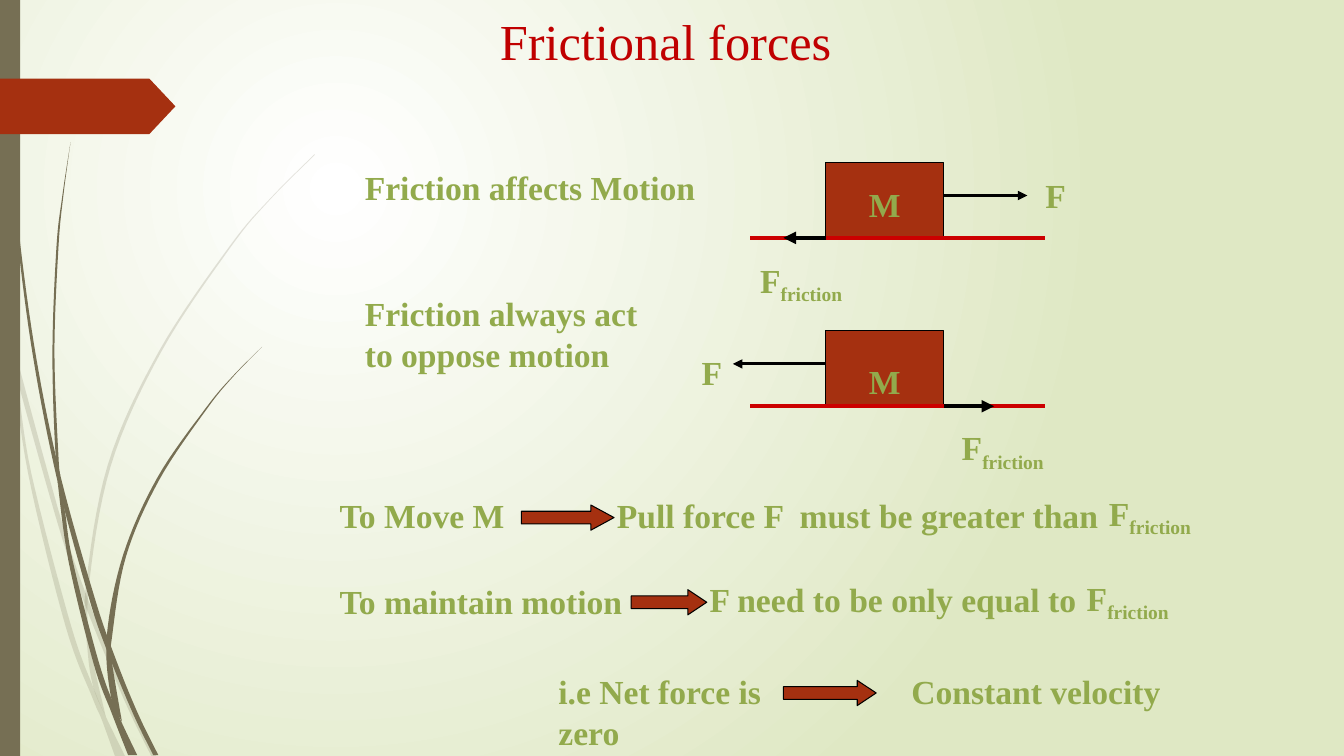
import pptx
import pptx.util
import pptx.dml.color
import pptx.enum.shapes
import pptx.enum.text
import pptx.oxml
import pptx.oxml.ns
import lxml.etree

PX = 9144  # 100 px to the inch
COLORS = {"bark": "766F54", "rust": "A53010", "green": "92AA4C", "title": "C00000",
          "floor": "CC0000", "black": "000000", "white": "FFFFFF", "pale": "DFE8C4"}
RGB = {name: pptx.dml.color.RGBColor.from_string(c) for name, c in COLORS.items()}
SHAPE = pptx.enum.shapes.MSO_SHAPE
qn = pptx.oxml.ns.qn

prs = pptx.Presentation()
prs.slide_width, prs.slide_height = 1333 * PX, 750 * PX
s = prs.slides.add_slide(prs.slide_layouts[6])

# Radial background
fill = s.background.fill
fill.gradient()
for stop, name, position in zip(fill.gradient_stops, ("white", "pale"), (0, 1)):
    stop.color.rgb = RGB[name]
    stop.position = position
lin = s.background._cSld.find(".//" + qn("a:lin"))
radial = lxml.etree.Element(qn("a:path"), path="circle")
lxml.etree.SubElement(radial, qn("a:fillToRect"), l="50000", t="50000", r="100000", b="100000")
lin.getparent().replace(lin, radial)


def smooth(points, steps=8):
    """Catmull-Rom curve through the points, in EMU."""
    padded = [points[0], *points, points[-1]]
    curve = []
    for a, b, c, d in zip(padded, padded[1:], padded[2:], padded[3:]):
        for i in range(steps):
            t = i / steps
            curve.append(tuple(
                PX * (q + t * (r - p) / 2 + t * t * (2 * p - 5 * q + 4 * r - u) / 2
                      + t ** 3 * (3 * q - p - 3 * r + u) / 2)
                for p, q, r, u in zip(a, b, c, d)))
    return curve + [(points[-1][0] * PX, points[-1][1] * PX)]


# Grass blades: opacity, then the two edges from top to bottom
blades = [
    (20, [(0, 299), (10, 344), (17, 376), (58, 522), (84, 599), (123, 694), (150, 750)],
         [(0, 282), (9, 322), (14, 345), (62, 520), (92, 607), (127, 692), (155, 750)]),
    (20, [(11, 350), (28, 470), (65, 621), (92, 693), (101, 714), (114, 750)],
         [(11, 350), (17, 376), (31, 469), (70, 619), (93, 683), (105, 711), (124, 750)]),
    (20, [(312, 153), (268, 197), (228, 244), (158, 348), (107, 461), (85, 584), (87, 646),
          (93, 683), (105, 711)],
         [(312, 154), (268, 198), (229, 245), (160, 349), (110, 462), (88, 584), (91, 646),
          (105, 711)]),
    (100, [(3, 0), (7, 110), (17, 233), (33, 355), (57, 477), (88, 592), (106, 645),
           (132, 708), (152, 749)],
          [(4, 0), (8, 109), (19, 232), (36, 355), (60, 472), (93, 590), (113, 649),
           (136, 706), (157, 749)]),
    (100, [(57, 477), (68, 557), (93, 659), (111, 708), (127, 749)],
          [(57, 477), (64, 505), (72, 556), (98, 657), (116, 706), (136, 749)]),
    (100, [(260, 344), (231, 373), (204, 405), (156, 474), (122, 551), (106, 631),
           (110, 691), (121, 716)],
          [(260, 344), (231, 374), (205, 406), (158, 476), (125, 552), (111, 633),
           (111, 656), (121, 716)]),
    (100, [(70, 141), (62, 193), (56, 245), (52, 349), (55, 449), (60, 472)],
          [(70, 141), (63, 193), (58, 245), (54, 349), (58, 453), (60, 472)]),
]
for opacity, left, right in blades:
    outline = smooth(left) + smooth(right)[::-1]
    builder = s.shapes.build_freeform(*outline[0], scale=1.0)
    builder.add_line_segments(outline[1:], close=True)
    blade = builder.convert_to_shape()
    blade.shadow.inherit = False
    blade.line.fill.background()
    blade.fill.solid()
    blade.fill.fore_color.rgb = RGB["bark"]
    if opacity < 100:
        color = blade._element.spPr.find(".//" + qn("a:srgbClr"))
        lxml.etree.SubElement(color, qn("a:alpha"), val=str(opacity * 1000))

# Side bar, tag, blocks and implication arrows
solids = [
    (SHAPE.RECTANGLE, 0, 0, 20, 750, "bark", False, []),
    (SHAPE.PENTAGON, 0, 78, 174, 55, "rust", False, [0.47]),
    (SHAPE.RECTANGLE, 819, 161, 117, 75, "rust", True, []),
    (SHAPE.RECTANGLE, 819, 328, 117, 75, "rust", True, []),
    (SHAPE.RIGHT_ARROW, 517, 501, 92, 25, "rust", True, [0.5, 0.92]),
    (SHAPE.RIGHT_ARROW, 626, 585, 75, 25, "rust", True, [0.5, 0.75]),
    (SHAPE.RIGHT_ARROW, 777, 675, 92, 25, "rust", True, [0.5, 0.75]),
]
for kind, x, y, w, h, color, outlined, adjustments in solids:
    sp = s.shapes.add_shape(kind, x * PX, y * PX, w * PX, h * PX)
    sp.shadow.inherit = False
    sp.fill.solid()
    sp.fill.fore_color.rgb = RGB[color]
    for i, value in enumerate(adjustments):
        sp.adjustments[i] = value
    if outlined:
        sp.line.color.rgb = RGB["black"]
        sp.line.width = pptx.util.Pt(0.75)
    else:
        sp.line.fill.background()

# Floors, pulls and friction forces
lines = []
for floor, pull, friction in ((236, (936, 1019), (819, 777)), (403, (819, 727), (936, 986))):
    lines += [(744, 1036, floor, "floor", 3, False),
              (*pull, floor - 42, "black", 2.25, True),
              (*friction, floor, "black", 3, True)]
for x1, x2, y, color, width, arrow in lines:
    line = s.shapes.add_connector(pptx.enum.shapes.MSO_CONNECTOR.STRAIGHT,
                                  x1 * PX, y * PX, x2 * PX, y * PX)
    line.line.color.rgb = RGB[color]
    line.line.width = pptx.util.Pt(width)
    if arrow:
        lxml.etree.SubElement(line.line._get_or_add_ln(), qn("a:tailEnd"), type="triangle")
    lxml.etree.SubElement(line._element.spPr, qn("a:effectLst"))

# Texts: an underscore starts a subscript
heading = {"size": pptx.util.Pt(36), "name": "Times New Roman", "bold": False}
body = {"size": pptx.util.Pt(24), "name": "Times New Roman", "bold": True}
texts = [
    ("Frictional forces", 486, 5, 400, 71, True),
    ("Friction affects Motion", 352, 161, 348, 50, False),
    ("F", 1027, 169, 41, 50, False),
    ("F_friction", 744, 253, 135, 50, True),
    ("M", 852, 178, 44, 50, True),
    ("Friction always act\nto oppose motion", 352, 286, 301, 91, False),
    ("F_friction", 944, 419, 112, 50, False),
    ("F", 686, 344, 41, 50, False),
    ("M", 852, 353, 52, 50, False),
    ("To Move M", 327, 486, 197, 50, False),
    ("Pull force F  must be greater than", 602, 486, 514, 50, False),
    ("F_friction", 1090, 484, 112, 50, False),
    ("To maintain motion", 327, 571, 306, 50, False),
    ("F need to be only equal to", 694, 569, 397, 50, False),
    ("F_friction", 1068, 568, 112, 50, False),
    ("i.e Net force is zero", 544, 661, 267, 91, True),
    ("Constant velocity", 894, 661, 270, 50, False),
]
for text, x, y, w, h, wrap in texts:
    tf = s.shapes.add_textbox(x * PX, y * PX, w * PX, h * PX).text_frame
    tf.word_wrap = wrap
    tf.auto_size = pptx.enum.text.MSO_AUTO_SIZE.SHAPE_TO_FIT_TEXT
    is_title = text == "Frictional forces"
    for i, row in enumerate(text.split("\n")):
        p = tf.add_paragraph() if i else tf.paragraphs[0]
        for j, part in enumerate(row.split("_")):
            r = p.add_run()
            r.text = part
            for key, value in (heading if is_title else body).items():
                setattr(r.font, key, value)
            r.font.color.rgb = RGB["title" if is_title else "green"]
            if j:
                r._r.get_or_add_rPr().set("baseline", "-25000")

prs.save("out.pptx")
